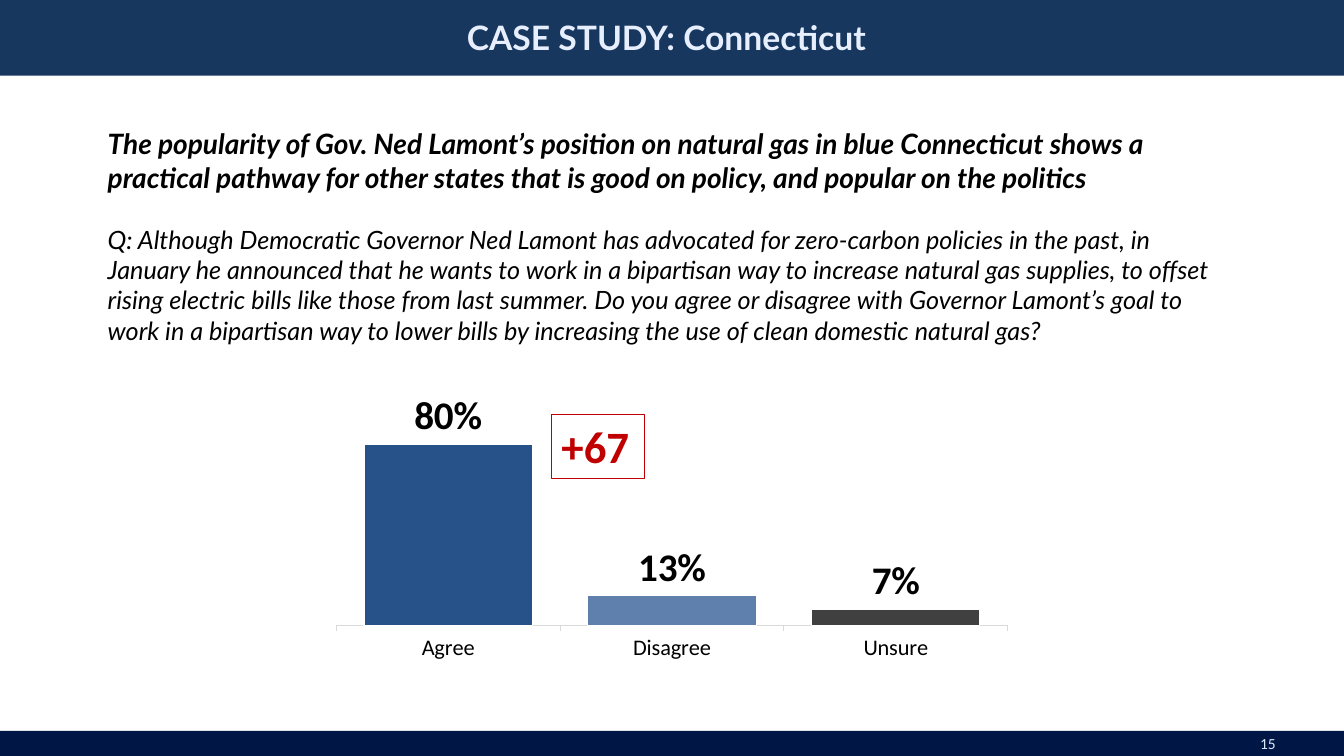
"""Build the Connecticut case study slide with its poll chart."""
from lxml import etree
from pptx import Presentation, util as u
from pptx.chart.data import CategoryChartData
from pptx.dml.color import RGBColor
from pptx.enum import chart as ch, shapes, text
from pptx.oxml import parse_xml
from pptx.oxml.ns import nsdecls, qn

COLORS = {
    "band": "17375E", "footer": "001746", "title": "E7EFFF", "page": "DCE9F8",
    "ink": "000000", "axis": "D9D9D9", "white": "FFFFFF", "accent": "C00000",
    "Agree": "265189", "Disagree": "5F7FAD", "Unsure": "404040",
}
RESULTS = {"Agree": 0.8, "Disagree": 0.13, "Unsure": 0.07}
HEADLINE = (
    "The popularity of Gov. Ned Lamont’s position on natural gas in blue Connecticut "
    "shows a practical pathway for other states that is good on policy, and popular on the politics"
)
QUESTION = (
    "Q: Although Democratic Governor Ned Lamont has advocated for zero-carbon policies in the past, "
    "in January he announced that he wants to work in a bipartisan way to increase natural gas "
    "supplies, to offset rising electric bills like those from last summer. Do you agree or disagree "
    "with Governor Lamont’s goal to work in a bipartisan way to lower bills by increasing the use of "
    "clean domestic natural gas?"
)


def color(name):
    return RGBColor.from_string(COLORS[name])


def set_font(font, size, name, shade, bold=False, italic=False):
    font.size, font.name = u.Pt(size), name
    font.bold, font.italic = bold, italic
    font.color.rgb = color(shade)


prs = Presentation()
prs.slide_width, prs.slide_height = u.Inches(13.33), u.Inches(7.5)
s = prs.slides.add_slide(prs.slide_layouts[6])

for top, height, shade in [(-0.01, 0.76, "band"), (7.25, 0.25, "footer")]:
    sp = s.shapes.add_shape(shapes.MSO_SHAPE.RECTANGLE, 0, u.Inches(top), u.Inches(13.33), u.Inches(height))
    sp.shadow.inherit = False
    sp.fill.solid()
    sp.fill.fore_color.rgb = color(shade)
    sp.line.fill.background()

page = s.shapes.add_textbox(u.Inches(12.4), u.Inches(7.23), u.Inches(0.93), u.Inches(0.29))
page.text_frame.word_wrap = True
p = page.text_frame.paragraphs[0]
p.text = "15"
set_font(p.font, 11, "Calibri", "page")

data = CategoryChartData(number_format="0%")
data.categories = list(RESULTS)
data.add_series("Series 1", list(RESULTS.values()))
chart = s.shapes.add_chart(
    ch.XL_CHART_TYPE.COLUMN_CLUSTERED, u.Inches(3.33), u.Inches(3.9), u.Inches(6.67), u.Inches(4), data
).chart
chart.has_legend = chart.has_title = False
set_font(chart.font, 10, "Calibri", "ink")

cat = chart.category_axis
cat.major_tick_mark = ch.XL_TICK_MARK.OUTSIDE
cat.format.line.color.rgb = color("axis")
cat.format.line.width = u.Pt(0.75)
set_font(cat.tick_labels.font, 16, "Calibri", "ink")
val = chart.value_axis
val.minimum_scale, val.maximum_scale = 0, 0.85
val.has_major_gridlines = False
val.visible = False

plot = chart.plots[0]
plot.gap_width = 33
plot.vary_by_categories = False
bars = plot.series[0]
bars.format.fill.solid()
bars.format.fill.fore_color.rgb = color("Agree")
for i, answer in enumerate(RESULTS):
    fmt = bars.points[i].format
    fmt.fill.solid()
    fmt.fill.fore_color.rgb = color(answer)
    fmt.line.color.rgb = color("white")
    fmt.line.width = u.Pt(0.75)
labels = bars.data_labels
labels.show_value = True
labels.number_format, labels.number_format_is_linked = "0%", False
labels.position = ch.XL_LABEL_POSITION.OUTSIDE_END
set_font(labels.font, 28, "Calibri", "ink", bold=True)

area = chart.element.find(".//" + qn("c:plotArea"))
for old in area.findall(qn("c:layout")):
    area.remove(old)
layout = parse_xml(f"<c:layout {nsdecls('c')}><c:manualLayout/></c:layout>")
for tag, value in [("layoutTarget", "inner"), ("xMode", "edge"), ("yMode", "edge"),
                   ("x", "0"), ("y", "0.095"), ("w", "1"), ("h", "0.479")]:
    etree.SubElement(layout[0], qn("c:" + tag)).set("val", value)
area.insert(0, layout)

body = s.shapes.add_textbox(u.Inches(0.97), u.Inches(1.21), u.Inches(11.4), u.Inches(2.29))
tf = body.text_frame
tf.word_wrap = True
p = tf.paragraphs[0]
p.text = HEADLINE
set_font(p.font, 20, "Lato", "ink", bold=True, italic=True)
p = tf.add_paragraph()
p.text = QUESTION
p.space_before = u.Pt(21.5)
set_font(p.font, 18, "Lato", "ink", italic=True)

title = s.shapes.add_textbox(0, u.Inches(0.08), u.Inches(13.3), u.Inches(0.57))
tf = title.text_frame
tf.word_wrap = True
tf.vertical_anchor = text.MSO_ANCHOR.MIDDLE
p = tf.paragraphs[0]
p.text = "CASE STUDY: Connecticut "
p.alignment = text.PP_ALIGN.CENTER
set_font(p.font, 24, "Lato", "title", bold=True)

margin = s.shapes.add_shape(
    shapes.MSO_SHAPE.RECTANGLE, u.Inches(5.47), u.Inches(4.11), u.Inches(0.92), u.Inches(0.64)
)
margin.shadow.inherit = False
margin.fill.background()
margin.line.color.rgb = color("accent")
margin.line.width = u.Pt(0.75)
tf = margin.text_frame
tf.word_wrap = False
tf.vertical_anchor = text.MSO_ANCHOR.TOP
p = tf.paragraphs[0]
p.text = "+67"
p.alignment = text.PP_ALIGN.LEFT
set_font(p.font, 32, "Calibri", "accent", bold=True)

prs.save("out.pptx")
